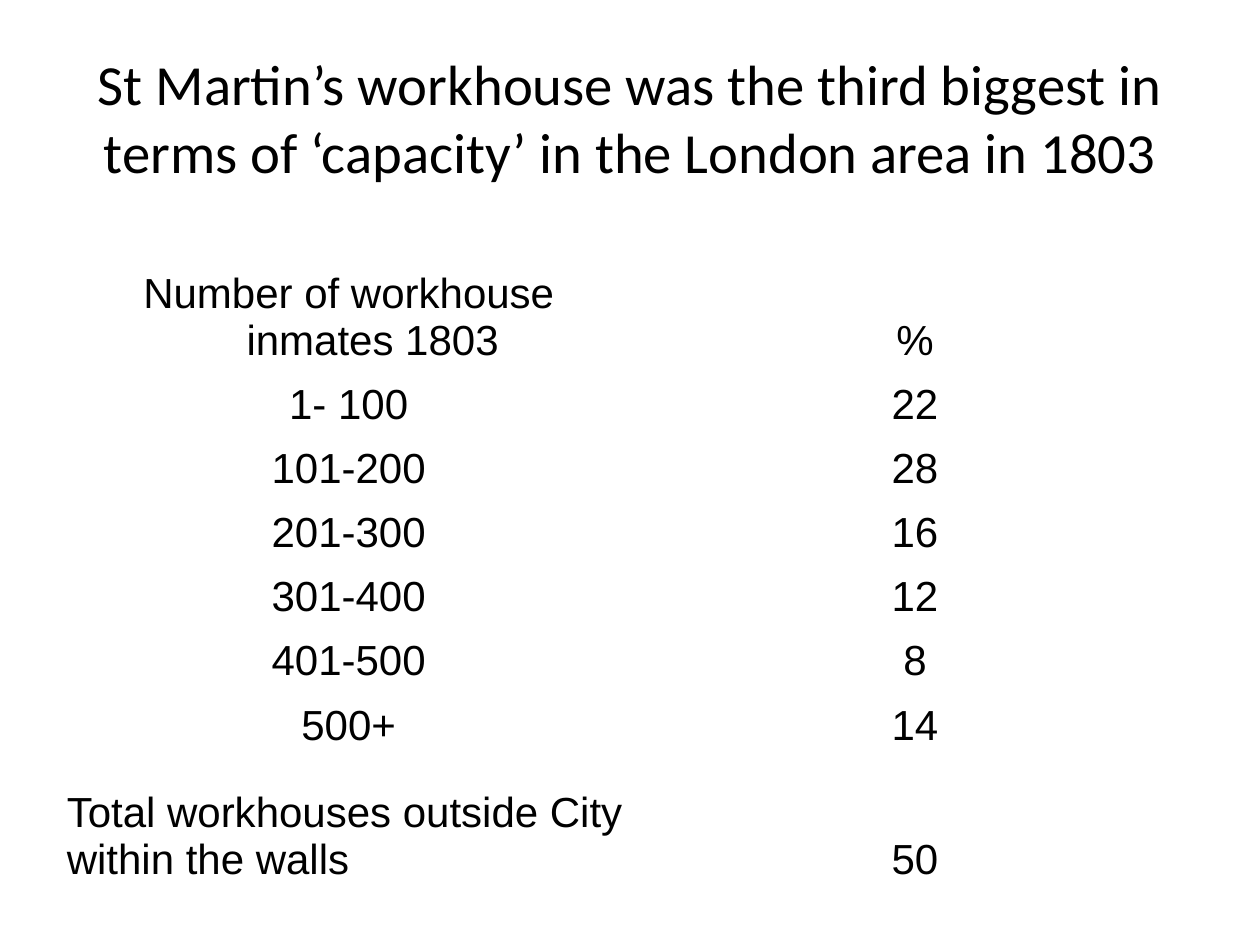
from pptx import Presentation
from pptx.dml.color import RGBColor
from pptx.enum.text import MSO_ANCHOR, MSO_AUTO_SIZE, PP_ALIGN
from pptx.util import Inches, Pt

CENTER, LEFT = PP_ALIGN.CENTER, PP_ALIGN.LEFT
BOTTOM, MIDDLE = MSO_ANCHOR.BOTTOM, MSO_ANCHOR.MIDDLE
NO_AUTOFIT = MSO_AUTO_SIZE.NONE
BLACK = "000000"
TITLE_ONLY = 5

TITLE = ("St Martin’s workhouse was the third biggest in terms of "
         "‘capacity’ in the London area in 1803")
ROWS = [
    ("Number of workhouse inmates 1803", "%"),
    ("1- 100", "22"),
    ("101-200", "28"),
    ("201-300", "16"),
    ("301-400", "12"),
    ("401-500", "8"),
    ("500+", "14"),
    ("Total workhouses outside City within the walls", "50"),
]
COL_SHARES = (0.52, 0.48)
HEADER_HEIGHT, TOTAL_HEIGHT = 0.82, 1.07
HANGING = Inches(0.38)


def rgb(color):
    return RGBColor.from_string(color)


def add_run(p, text, font, size, color=BLACK):
    r = p.add_run()
    r.text = text
    r.font.name = font
    r.font.size = Pt(size)
    r.font.color.rgb = rgb(color)


def add_title(s, left, top, width, height):
    title = s.shapes.title
    title.left, title.top = Inches(left), Inches(top)
    title.width, title.height = Inches(width), Inches(height)
    tf = title.text_frame
    tf.auto_size = NO_AUTOFIT
    tf.word_wrap = True
    tf.vertical_anchor = MIDDLE
    p = tf.paragraphs[0]
    p.alignment = CENTER
    add_run(p, TITLE, "Calibri", 32.4)


def fill_cell(cell, text, is_total_label):
    cell.fill.background()
    cell.vertical_anchor = BOTTOM
    p = cell.text_frame.paragraphs[0]
    if is_total_label:
        p.alignment = LEFT
        p.space_before = Pt(4.8)
    else:
        p.alignment = CENTER
        pPr = p._p.get_or_add_pPr()
        pPr.set("marL", str(HANGING))
        pPr.set("indent", str(-HANGING))
    add_run(p, text, "Arial", 24)


def add_inmates_table(s, left, top, width, height):
    frame = s.shapes.add_table(len(ROWS), len(COL_SHARES), Inches(left),
                               Inches(top), Inches(width), Inches(height))
    table = frame.table
    table.first_row = table.horz_banding = False
    for column, share in zip(table.columns, COL_SHARES):
        column.width = Inches(width * share)

    last = len(ROWS) - 1
    band_height = (height - HEADER_HEIGHT - TOTAL_HEIGHT) / (last - 1)
    heights = [HEADER_HEIGHT] + [band_height] * (last - 1) + [TOTAL_HEIGHT]
    for i, (row_height, texts) in enumerate(zip(heights, ROWS)):
        table.rows[i].height = Inches(row_height)
        for j, text in enumerate(texts):
            fill_cell(table.cell(i, j), text, i == last and j == 0)


def main():
    prs = Presentation()
    prs.slide_width, prs.slide_height = Inches(10), Inches(7.5)
    s = prs.slides.add_slide(prs.slide_layouts[TITLE_ONLY])
    add_title(s, 0.5, 0.3, 9, 1.25)
    add_inmates_table(s, 0.43, 2.1, 8.99, 4.94)
    prs.save("out.pptx")


if __name__ == "__main__":
    main()
